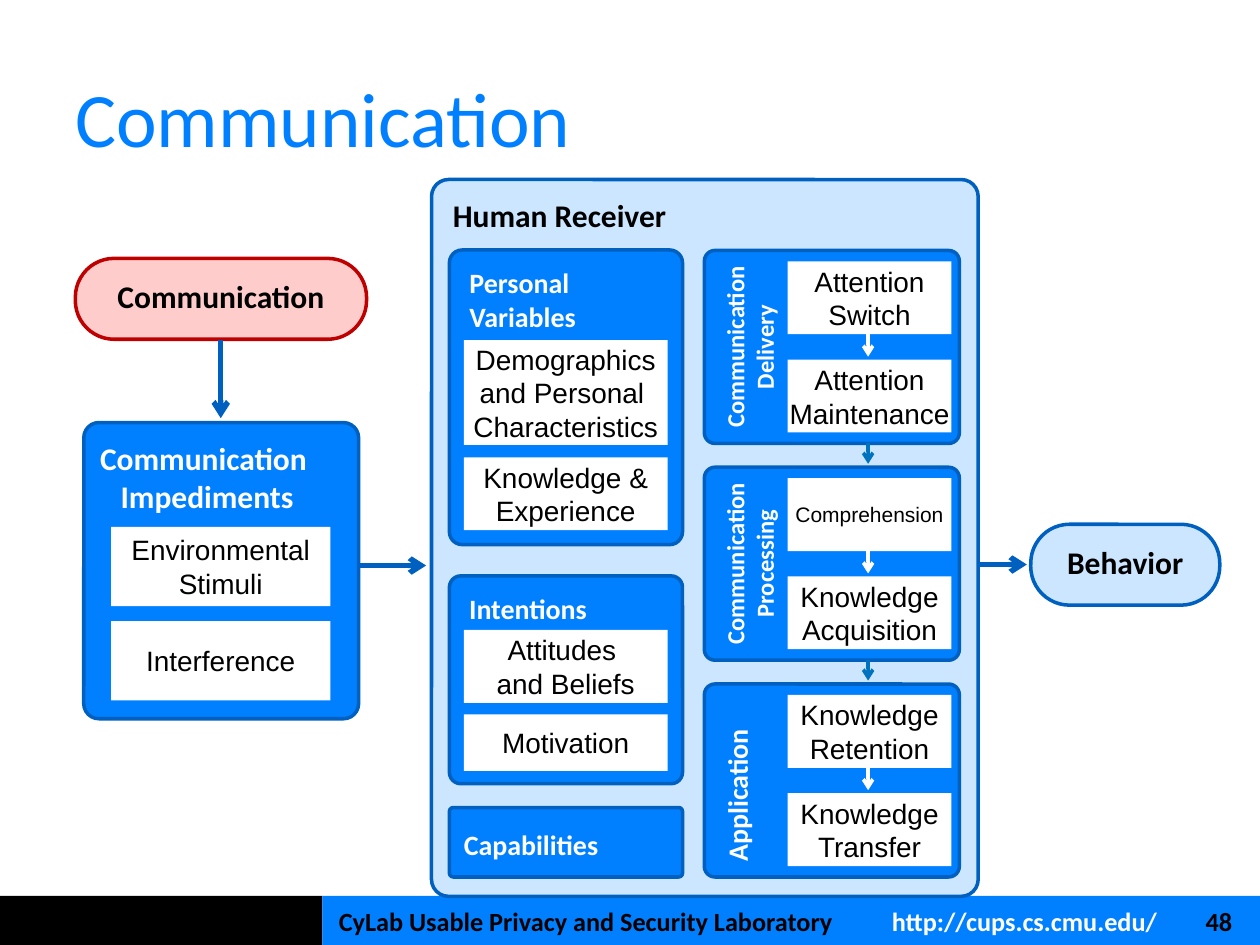
from typing import NamedTuple

from lxml.etree import SubElement
from pptx import Presentation
from pptx.dml.color import RGBColor
from pptx.enum.shapes import MSO_CONNECTOR as Connector, MSO_SHAPE as Preset
from pptx.enum.text import MSO_ANCHOR as Anchor, PP_ALIGN as Align
from pptx.oxml.ns import qn
from pptx.util import Cm, Pt

COLORS = {
    "black": "000000", "white": "FFFFFF", "blue": "0080FF", "edge": "0060BF",
    "link": "0073BF", "pale": "CCE6FF", "pink": "FFCCCC", "red": "BF0000",
}
STAGE_TOP, STAGE_PITCH, STAGE_HEIGHT = 5.05, 4.37, 3.89
STEP_OFFSETS, STEP_HEIGHT = (0.22, 2.2), 1.47
STEP_AXIS = 17.5


class Area(NamedTuple):
    left: float
    top: float
    width: float
    height: float


class Panel(NamedTuple):
    heading: str
    area: Area
    size: int
    fill: str = "blue"
    ink: str = "white"
    edge: str = "edge"
    radius: float = 0.055
    align: Align = Align.LEFT
    anchor: Anchor = Anchor.TOP
    margins: tuple = (0.33, 0.24, 0.1, 0.24)
    vertical: bool = False


class Factor(NamedTuple):
    label: str
    area: Area
    size: int = 16


class Arrow(NamedTuple):
    start: tuple
    end: tuple
    color: str = "edge"
    width: float = 3


class Stage(NamedTuple):
    heading: str
    size: int
    align: Align
    steps: tuple


PILL = dict(size=18, ink="black", radius=0.479, align=Align.CENTER,
            anchor=Anchor.MIDDLE, margins=(0, 0, 0, 0.1))
PANELS = [
    Panel("Communication", Area(1.52, 5.21, 5.87, 1.63), fill="pink", edge="red", **PILL),
    Panel("Behavior", Area(20.78, 10.57, 3.81, 1.63), fill="pale", **PILL),
    Panel("Communication \vImpediments", Area(1.69, 8.52, 5.54, 5.97), 18,
          align=Align.CENTER, margins=(0.1, 0.25, 0.67, 0.1)),
    Panel("Human Receiver", Area(8.7, 3.62, 11.02, 14.45), 18, "pale", "black", radius=0.031),
    Panel("Personal\vVariables", Area(9.06, 5.04, 4.7, 5.94), 16),
    Panel("Intentions", Area(9.06, 11.61, 4.7, 4.19), 16),
    Panel("Capabilities", Area(9.06, 16.28, 4.7, 1.4), 16,
          anchor=Anchor.MIDDLE, margins=(0.27, 0.1, 0.1, 0)),
]
FACTORS = [
    Factor("Environmental\vStimuli", Area(2.24, 10.62, 4.42, 1.6)),
    Factor("Interference", Area(2.24, 12.52, 4.42, 1.6)),
    Factor("Demographics\vand Personal \vCharacteristics", Area(9.35, 6.86, 4.11, 2.11)),
    Factor("Knowledge &\vExperience", Area(9.35, 9.22, 4.11, 1.47)),
    Factor("Attitudes \vand Beliefs", Area(9.35, 12.7, 4.11, 1.47)),
    Factor("Motivation", Area(9.35, 14.4, 4.11, 1.14)),
]
STAGES = [
    Stage("Communication\vDelivery", 14, Align.CENTER,
          (("Attention\vSwitch", 16), ("Attention\vMaintenance", 16))),
    Stage("Communication\vProcessing", 14, Align.CENTER,
          (("Comprehension", 12), ("Knowledge\vAcquisition", 16))),
    Stage("Application", 16, Align.LEFT,
          (("Knowledge\vRetention", 16), ("Knowledge\vTransfer", 16))),
]
FLOWS = [
    Arrow((4.45, 6.86), (4.45, 8.43)),
    Arrow((7.26, 11.4), (8.59, 11.4)),
    Arrow((19.74, 11.38), (20.7, 11.38)),
]


def rgb(color: str) -> RGBColor:
    """Look up a named colour."""
    return RGBColor.from_string(COLORS[color])


def write(frame, text: str, *, size: int, ink: str = "black", font: str = "Calibri",
          bold: bool = False, align: Align = Align.LEFT, anchor: Anchor = Anchor.MIDDLE,
          margins: tuple = (0, 0, 0, 0), wrap: bool = True) -> None:
    """Fill a text frame with one formatted paragraph."""
    frame.word_wrap, frame.vertical_anchor = wrap, anchor
    (frame.margin_left, frame.margin_top,
     frame.margin_right, frame.margin_bottom) = map(Cm, margins)
    paragraph = frame.paragraphs[0]
    paragraph.text, paragraph.alignment = text, align
    style = paragraph.font
    style.name, style.size, style.bold = font, Pt(size), bold
    style.color.rgb = rgb(ink)


def add_block(slide, area: Area, fill: str, preset: Preset = Preset.RECTANGLE):
    """Add a filled shape without outline or shadow."""
    block = slide.shapes.add_shape(preset, *map(Cm, area))
    block.shadow.inherit = False
    block.fill.solid()
    block.fill.fore_color.rgb = rgb(fill)
    block.line.fill.background()
    return block


def add_label(slide, area: Area, text: str, **style) -> None:
    """Add a free-standing text box."""
    write(slide.shapes.add_textbox(*map(Cm, area)).text_frame, text, **style)


def add_panel(slide, panel: Panel) -> None:
    """Add a rounded panel with its heading."""
    block = add_block(slide, panel.area, panel.fill, Preset.ROUNDED_RECTANGLE)
    block.adjustments[0] = panel.radius
    block.line.color.rgb = rgb(panel.edge)
    block.line.width = Pt(2)
    write(block.text_frame, panel.heading, size=panel.size, ink=panel.ink, bold=True,
          align=panel.align, anchor=panel.anchor, margins=panel.margins)
    if panel.vertical:
        block.text_frame._txBody.bodyPr.set("vert", "vert270")


def add_factor(slide, factor: Factor) -> None:
    """Add a white box with a centred label."""
    block = add_block(slide, factor.area, "white")
    write(block.text_frame, factor.label, size=factor.size, font="Arial",
          align=Align.CENTER, wrap=False)


def add_arrow(slide, arrow: Arrow) -> None:
    """Add a straight line with an open arrowhead."""
    link = slide.shapes.add_connector(
        Connector.STRAIGHT, *map(Cm, arrow.start + arrow.end))
    link.line.color.rgb = rgb(arrow.color)
    link.line.width = Pt(arrow.width)
    SubElement(link.line._get_or_add_ln(), qn("a:tailEnd"), type="arrow")
    SubElement(link._element.spPr, qn("a:effectLst"))


def add_stage(slide, stage: Stage, top: float) -> None:
    """Add a processing stage with its two linked steps."""
    add_panel(slide, Panel(stage.heading, Area(14.2, top, 5.14, STAGE_HEIGHT), stage.size,
                           align=stage.align, margins=(0.25, 0.25, 0.25, 0.25),
                           vertical=True))
    for (label, size), offset in zip(stage.steps, STEP_OFFSETS):
        add_factor(slide, Factor(label, Area(15.88, top + offset, 3.3, STEP_HEIGHT), size))
    add_arrow(slide, Arrow((STEP_AXIS, top + STEP_OFFSETS[0] + STEP_HEIGHT),
                           (STEP_AXIS, top + STEP_OFFSETS[1] - 0.06), "white", 2))


def add_footer(slide) -> None:
    """Add the footer bar with its three texts."""
    add_block(slide, Area(0, 18.06, 6.5, 0.99), "black")
    add_block(slide, Area(6.5, 18.06, 18.9, 0.99), "blue")
    for text, left, width, ink, align in (
        ("CyLab Usable Privacy and Security Laboratory", 6.83, 10.8, "black", Align.LEFT),
        ("http://cups.cs.cmu.edu/", 17.98, 5.8, "white", Align.LEFT),
        ("48", 23.84, 1, "black", Align.RIGHT),
    ):
        add_label(slide, Area(left, 18.21, width, 0.7), text,
                  size=15, ink=ink, bold=True, align=align)


def main() -> None:
    """Build the slide and save it."""
    deck = Presentation()
    deck.slide_width, deck.slide_height = Cm(25.4), Cm(19.05)
    slide = deck.slides.add_slide(deck.slide_layouts[6])
    add_footer(slide)
    add_label(slide, Area(1.27, 0.76, 22.86, 3.18), "Communication",
              size=44, ink="blue", margins=(0.25, 0.13, 0.25, 0.13))
    for panel in PANELS:
        add_panel(slide, panel)
    for factor in FACTORS:
        add_factor(slide, factor)
    for index, stage in enumerate(STAGES):
        top = STAGE_TOP + index * STAGE_PITCH
        add_stage(slide, stage, top)
        if index:
            add_arrow(slide, Arrow((STEP_AXIS, top - STAGE_PITCH + STAGE_HEIGHT),
                                   (STEP_AXIS, top - 0.07), "link", 2))
    for flow in FLOWS:
        add_arrow(slide, flow)
    deck.save("out.pptx")


if __name__ == "__main__":
    main()
